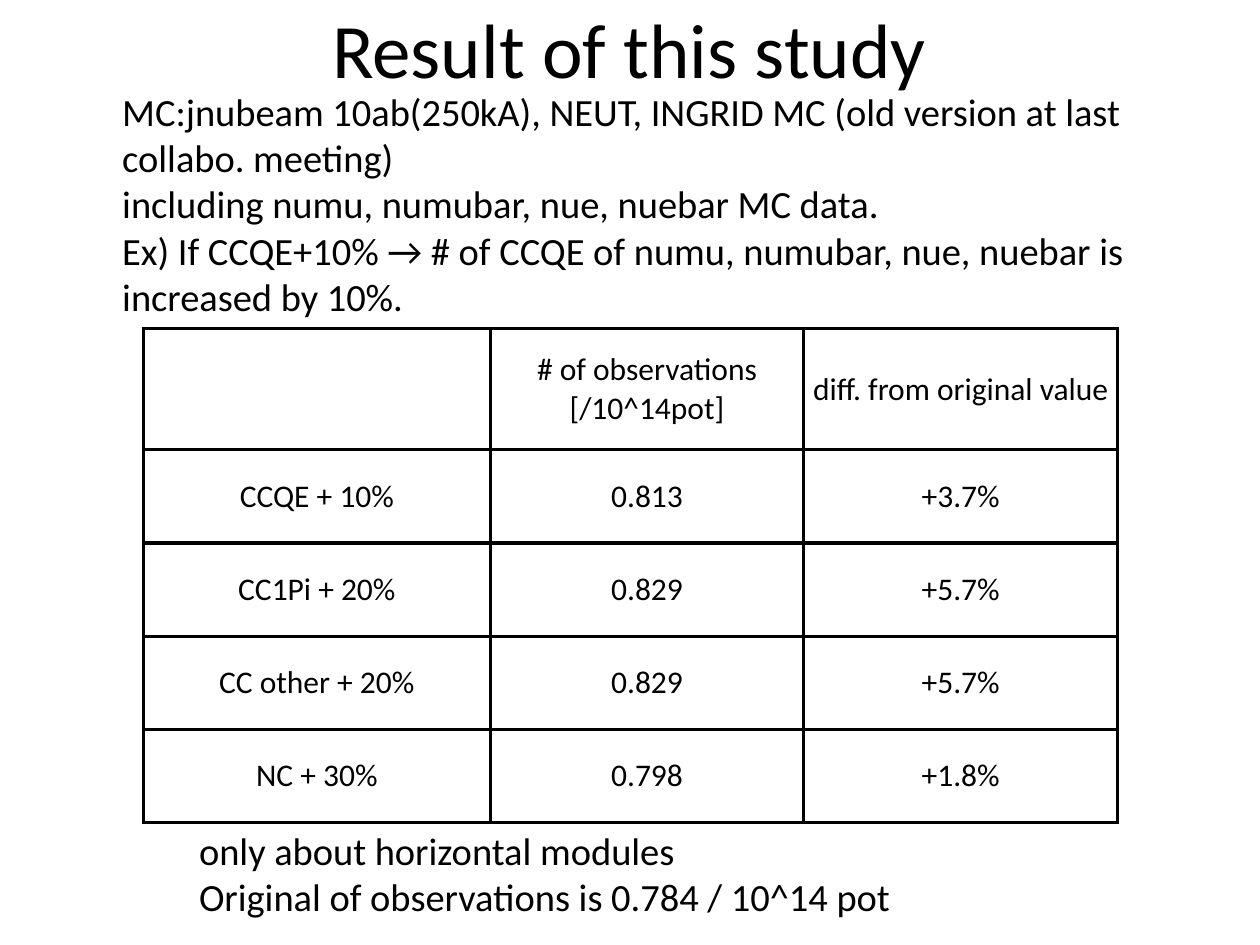
from lxml.etree import SubElement
from pptx import Presentation
from pptx.dml.color import RGBColor
from pptx.enum.text import MSO_ANCHOR as Anchor, PP_ALIGN as Align
from pptx.oxml.ns import qn
from pptx.util import Inches, Pt

COLORS = {"text": "000000", "border": "000000", "cell": "FFFFFF"}
FONT = "Calibri"

# Content: paragraphs, box (left, top, width, height), size, alignment
TEXTS = [
    (["Result of this study"], (0.97, -0.33, 8.05, 1.41), 44, Align.CENTER),
    (["MC:jnubeam 10ab(250kA), NEUT, INGRID MC (old version at last collabo. meeting)",
      "including numu, numubar, nue, nuebar MC data.",
      "Ex) If CCQE+10% → # of CCQE of numu, numubar, nue, nuebar is increased by 10%."],
     (0.97, 0.98, 8.05, 1.27), 22, Align.LEFT),
    (["only about horizontal modules",
      "Original of observations is 0.784 / 10^14 pot"],
     (1.58, 6.54, 6.83, 0.78), 22, Align.LEFT),
]
RESULTS = [
    ("", "# of observations [/10^14pot]", "diff. from original value"),
    ("CCQE + 10%", "0.813", "+3.7%"),
    ("CC1Pi + 20%", "0.829", "+5.7%"),
    ("CC other + 20%", "0.829", "+5.7%"),
    ("NC + 30%", "0.798", "+1.8%"),
]
TABLE_LEFT, TABLE_TOP = 1.14, 2.61
COLUMN_WIDTHS = [2.75, 2.49, 2.49]
ROW_HEIGHTS = [0.96] + [0.74] * (len(RESULTS) - 1)
TABLE_SIZE, CELL_MARGIN, BORDER_WIDTH = 18, 0.04, 2


def set_margins(target, margin):
    for side in ("left", "top", "right", "bottom"):
        setattr(target, f"margin_{side}", Inches(margin))


def write(frame, lines, size, alignment):
    frame.word_wrap = True
    for index, line in enumerate(lines):
        paragraph = frame.add_paragraph() if index else frame.paragraphs[0]
        paragraph.alignment = alignment
        paragraph.font.size = Pt(size)
        if not line:
            continue
        run = paragraph.add_run()
        run.text = line
        for name, value in {"name": FONT, "size": Pt(size)}.items():
            setattr(run.font, name, value)
        run.font.color.rgb = RGBColor.from_string(COLORS["text"])


def add_borders(cell):
    properties = cell._tc.get_or_add_tcPr()
    for position, side in enumerate(("lnL", "lnR", "lnT", "lnB")):
        line = SubElement(properties, qn(f"a:{side}"), w=str(Pt(BORDER_WIDTH)))
        fill = SubElement(line, qn("a:solidFill"))
        SubElement(fill, qn("a:srgbClr"), val=COLORS["border"])
        properties.insert(position, line)  # borders come before the fill


presentation = Presentation()
presentation.slide_width, presentation.slide_height = Inches(10), Inches(7.5)
slide = presentation.slides.add_slide(presentation.slide_layouts[6])

# Title and notes above and below the table
for lines, box, size, alignment in TEXTS:
    frame = slide.shapes.add_textbox(*map(Inches, box)).text_frame
    frame.vertical_anchor = Anchor.MIDDLE
    set_margins(frame, 0)
    write(frame, lines, size, alignment)

# Results table
table = slide.shapes.add_table(
    len(RESULTS), len(COLUMN_WIDTHS), Inches(TABLE_LEFT), Inches(TABLE_TOP),
    Inches(sum(COLUMN_WIDTHS)), Inches(sum(ROW_HEIGHTS))).table
table.first_row = table.horz_banding = False
for column, width in zip(table.columns, COLUMN_WIDTHS):
    column.width = Inches(width)
for row, height, values in zip(table.rows, ROW_HEIGHTS, RESULTS):
    row.height = Inches(height)
    for cell, value in zip(row.cells, values):
        cell.fill.solid()
        cell.fill.fore_color.rgb = RGBColor.from_string(COLORS["cell"])
        cell.vertical_anchor = Anchor.MIDDLE
        set_margins(cell, CELL_MARGIN)
        write(cell.text_frame, [value], TABLE_SIZE, Align.CENTER)
        add_borders(cell)

presentation.save("out.pptx")
